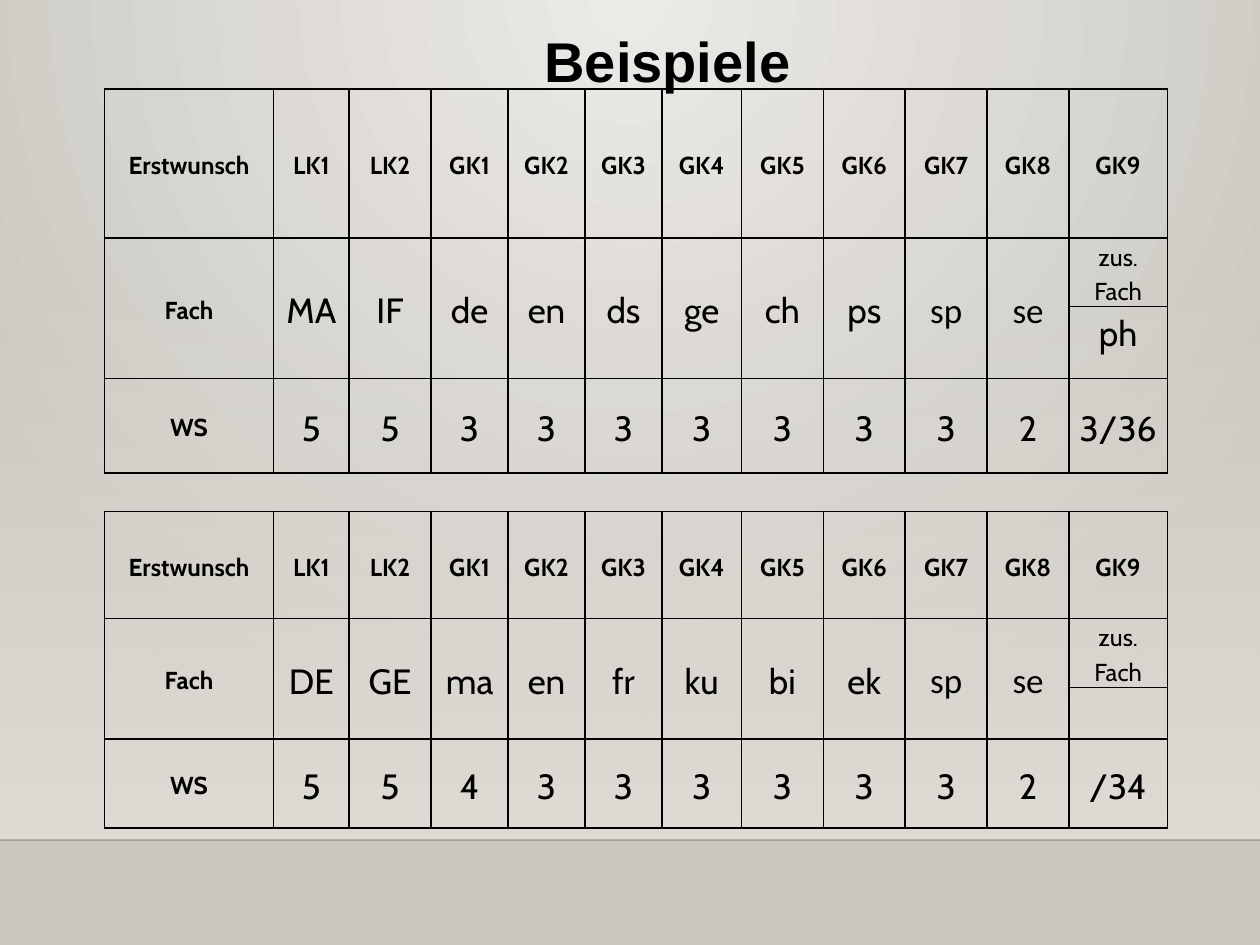
import pptx
import pptx.dml.color
import pptx.enum.shapes
import pptx.enum.text
import pptx.oxml
import pptx.oxml.ns
import pptx.util
from lxml import etree

Pt = pptx.util.Pt
BLACK = "000000"
COLUMN_WIDTHS = [96.5, 43.2, 46.8, 44, 44, 44, 45.4, 46.8, 46.8, 46.8, 46.8, 56.2]
HEADERS = ["Erstwunsch", "LK1", "LK2"] + [f"GK{number}" for number in range(1, 10)]
CALIBRI_SUBJECTS = ("sp", "se")
LAST = len(HEADERS) - 1


def rgb(color):
    """Return the colour for a hex string."""
    return pptx.dml.color.RGBColor.from_string(color)


def add_element(parent, tag, **attributes):
    """Append a drawing element and return it."""
    return etree.SubElement(parent, pptx.oxml.ns.qn(tag), attributes)


def set_gradient(fill, colors):
    """Give a fill two gradient stops running downwards."""
    fill.gradient()
    fill.gradient_angle = 270
    for stop, color, position in zip(fill.gradient_stops, colors, (0, 1)):
        stop.color.rgb = rgb(color)
        stop.position = position


def set_background(slide):
    """Paint the slide with a circular gradient lit from the top."""
    set_gradient(slide.background.fill, ("ECEAE7", "CAC7C1"))
    gradient = slide._element.xpath(".//p:bg//a:gradFill")[0]
    gradient.remove(gradient.xpath("a:lin")[0])
    circle = add_element(gradient, "a:path", path="circle")
    add_element(circle, "a:fillToRect", l="43000", t="0", r="43000", b="100000")


def add_wall(slide):
    """Add the panel that fades in towards the floor."""
    wall = slide.shapes.add_shape(
        pptx.enum.shapes.MSO_SHAPE.RECTANGLE, 0, Pt(158.4), Pt(720), Pt(321.4))
    wall.shadow.inherit = False
    wall.line.fill.background()
    set_gradient(wall.fill, ("DFDBD5", "DFDBD5"))
    first_color = wall._element.xpath(".//a:gs/a:srgbClr")[0]
    add_element(first_color, "a:alpha", val="0")


def add_floor_line(slide):
    """Add the faint line between wall and floor."""
    line = slide.shapes.add_connector(
        pptx.enum.shapes.MSO_CONNECTOR.STRAIGHT, 0, Pt(480), Pt(720), Pt(480))
    line.line.width = Pt(1)
    line.line.color.rgb = rgb("000001")
    add_element(line._element.xpath(".//a:ln//a:srgbClr")[0], "a:alpha", val="20000")
    add_element(line._element.spPr, "a:effectLst")


def add_run(paragraph, text, size, font="Cabin", bold=False):
    """Add one formatted run to a centred paragraph."""
    paragraph.alignment = pptx.enum.text.PP_ALIGN.CENTER
    run = paragraph.add_run()
    run.text = text
    run.font.size = Pt(size)
    run.font.name = font
    run.font.bold = bold
    run.font.color.rgb = rgb(BLACK)


def set_title(slide, text):
    """Place and format the slide title."""
    title = slide.shapes.title
    title.left, title.top, title.width, title.height = Pt(291.5), Pt(12), Pt(180), Pt(45)
    frame = title.text_frame
    frame.margin_left = frame.margin_right = frame.margin_top = frame.margin_bottom = 0
    frame.vertical_anchor = pptx.enum.text.MSO_ANCHOR.MIDDLE
    add_run(frame.paragraphs[0], text, 32, "Arial", True)


def format_cell(cell):
    """Clear the fill of a cell, set its margins and draw its borders."""
    cell.fill.background()
    cell.margin_left = cell.margin_right = Pt(5)
    cell.margin_top = cell.margin_bottom = 0
    properties = cell._tc.get_or_add_tcPr()
    for index, side in enumerate("LRTB"):
        border = pptx.oxml.parse_xml(
            f'<a:ln{side} {pptx.oxml.ns.nsdecls("a")} w="12700"><a:solidFill>'
            f'<a:srgbClr val="{BLACK}"/></a:solidFill></a:ln{side}>')
        properties.insert(index, border)


def fill_cell(cell, text, size, font="Cabin", bold=False, anchor="MIDDLE"):
    """Write one entry into a cell."""
    cell.vertical_anchor = pptx.enum.text.MSO_ANCHOR[anchor]
    paragraph = cell.text_frame.paragraphs[0]
    paragraph.line_spacing = 1.15
    add_run(paragraph, text, size, font, bold)


def add_course_table(slide, top, row_heights, subjects, extra_subject, hours):
    """Add a table of chosen courses with their weekly hours."""
    table = slide.shapes.add_table(
        len(row_heights), len(HEADERS), Pt(59.8), Pt(top),
        Pt(sum(COLUMN_WIDTHS)), Pt(sum(row_heights))).table
    table.first_row = table.horz_banding = False
    for column, width in zip(table.columns, COLUMN_WIDTHS):
        column.width = Pt(width)
    for row, height in zip(table.rows, row_heights):
        row.height = Pt(height)
    for cell in table.iter_cells():
        format_cell(cell)
    for index, header in enumerate(HEADERS):
        fill_cell(table.cell(0, index), header, 14, bold=True)
    for index, subject in enumerate(["Fach"] + subjects):
        table.cell(1, index).merge(table.cell(2, index))
        label = index == 0
        font = "Calibri" if subject in CALIBRI_SUBJECTS else "Cabin"
        fill_cell(table.cell(1, index), subject, 14 if label else 20, font, label)
    fill_cell(table.cell(1, LAST), "zus. Fach", 14, anchor="TOP")
    if extra_subject:
        fill_cell(table.cell(2, LAST), extra_subject, 20, anchor="TOP")
    for index, value in enumerate(["WS"] + hours):
        label = index == 0
        fill_cell(table.cell(3, index), value, 14 if label else 20, bold=label)


def main():
    """Build the slide and save it."""
    presentation = pptx.Presentation()
    presentation.slide_width, presentation.slide_height = Pt(720), Pt(540)
    slide = presentation.slides.add_slide(presentation.slide_layouts[5])
    set_background(slide)
    add_wall(slide)
    add_floor_line(slide)
    add_course_table(
        slide, 292.3, [61.2, 39, 29.5, 51.1],
        ["DE", "GE", "ma", "en", "fr", "ku", "bi", "ek", "sp", "se"], "",
        ["5", "5", "4", "3", "3", "3", "3", "3", "3", "2", "/34"])
    add_course_table(
        slide, 51, [85, 39, 41, 54],
        ["MA", "IF", "de", "en", "ds", "ge", "ch", "ps", "sp", "se"], "ph",
        ["5", "5", "3", "3", "3", "3", "3", "3", "3", "2", "3/36"])
    set_title(slide, "Beispiele")
    presentation.save("out.pptx")


if __name__ == "__main__":
    main()
